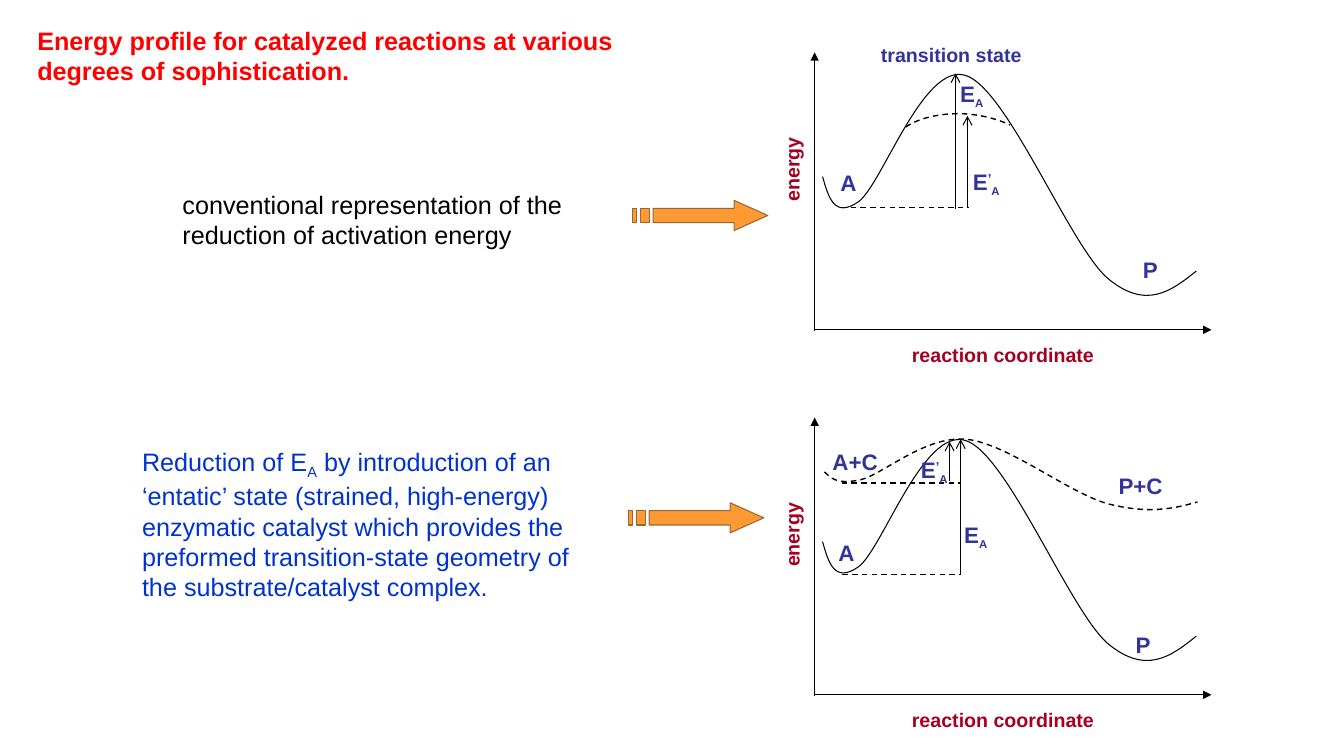
from lxml import etree
from pptx import Presentation
from pptx.dml.color import RGBColor
from pptx.enum.dml import MSO_LINE
from pptx.enum.shapes import MSO_CONNECTOR
from pptx.oxml.ns import qn
from pptx.util import Cm, Pt

STRAIGHT = MSO_CONNECTOR.STRAIGHT
DASH = MSO_LINE.DASH
COLORS = {
    "title": "FF0000", "body": "000000", "note": "0033CC",
    "axis": "A50021", "label": "333399", "line": "000000",
    "arrow": "FF9933", "arrow edge": "996633",
}
SHIFTS = {"_": "-25000", "^": "30000"}
DIAGRAM_TOPS = (0, 9.2)

presentation = Presentation()
presentation.slide_width, presentation.slide_height = Cm(33.87), Cm(19.05)
slide = presentation.slides.add_slide(presentation.slide_layouts[6])
shapes = slide.shapes


def write(text, left, top, width, height, color="label", size=16, bold=True,
          small=None, spacing=None, rotation=0):
    """Runs are split by |; a leading _ lowers a run, ^ raises it."""
    box = shapes.add_textbox(Cm(left), Cm(top), Cm(width), Cm(height))
    box.rotation = rotation
    frame = box.text_frame
    frame.word_wrap = True
    for index, line in enumerate(text.split("\n")):
        paragraph = frame.paragraphs[0] if index == 0 else frame.add_paragraph()
        if spacing:
            paragraph.line_spacing = spacing
        for piece in line.split("|"):
            run = paragraph.add_run()
            run.text = piece.lstrip("_^")
            run.font.name = "Arial"
            run.font.size = Pt(small if small and piece[0] == "_" else size)
            run.font.bold = bold
            run.font.color.rgb = RGBColor.from_string(COLORS[color])
            if piece[0] in SHIFTS:
                run._r.get_or_add_rPr().set("baseline", SHIFTS[piece[0]])


# Energy curves: a start, then two control points and an end for each cubic
reaction = [(20.73, 4.45), (20.88, 4.98), (21.03, 5.51), (21.64, 5.08),
            (22.23, 4.65), (23.27, 1.57), (24.33, 1.9),
            (25.37, 2.21), (26.95, 6.17), (27.91, 7.01),
            (28.88, 7.82), (29.51, 7.34), (30.15, 6.83)]
lowered_peak = [(22.83, 3.2), (23.16, 2.97), (23.72, 2.84), (24.33, 2.87),
                (24.74, 2.9), (25.15, 3), (25.45, 3.15)]
entatic = [(20.78, 11.89), (20.93, 12.04), (21.08, 12.22), (21.69, 12.09),
           (22.28, 11.94), (23.32, 10.97), (24.36, 11.07),
           (25.4, 11.18), (26.97, 12.45), (27.94, 12.7),
           (28.93, 12.95), (29.54, 12.83), (30.18, 12.65)]
curves = [([(x, y + top) for x, y in reaction], False) for top in DIAGRAM_TOPS]
curves += [(lowered_peak, True), (entatic, True)]
for points, dashed in curves:
    points = [(Cm(x), Cm(y)) for x, y in points]
    builder = shapes.build_freeform(*points[0])
    builder.add_line_segments(points[1:], close=False)
    curve = builder.convert_to_shape()
    outline = next(curve._element.iter(qn("a:path")))
    segments = outline.findall(qn("a:lnTo"))
    for first in range(0, len(segments), 3):
        cubic = etree.SubElement(outline, qn("a:cubicBezTo"))
        for segment in segments[first:first + 3]:
            cubic.append(segment[0])
            outline.remove(segment)
    curve.shadow.inherit = False
    curve.fill.background()
    curve.line.color.rgb = RGBColor.from_string(COLORS["line"])
    curve.line.width = Pt(1 if dashed else 0.75)
    if dashed:
        curve.line.dash_style = DASH

# Axes, energy levels (dashed, no head) and activation energies
lines = []
for top in DIAGRAM_TOPS:
    lines += [(20.53, 8.33 + top, 20.53, 1.32 + top, "triangle"),
              (20.54, 8.31 + top, 30.53, 8.31 + top, "triangle")]
lines += [
    (21.44, 5.23, 24.43, 5.23, None),
    (24.08, 5.26, 24.08, 1.85, "arrow"),
    (24.38, 5.23, 24.38, 2.92, "arrow"),
    (21.21, 12.17, 24.21, 12.17, None),
    (21.23, 14.48, 24.23, 14.48, None),
    (24.21, 14.48, 24.21, 11.07, "arrow"),
    (23.93, 12.12, 23.93, 11.13, "arrow"),
]
for x1, y1, x2, y2, head in lines:
    connector = shapes.add_connector(STRAIGHT, Cm(x1), Cm(y1), Cm(x2), Cm(y2))
    connector.line.color.rgb = RGBColor.from_string(COLORS["line"])
    connector.line.width = Pt(0.75 if head else 1)
    if head:
        etree.SubElement(connector.line._get_or_add_ln(), qn("a:tailEnd"), type=head)
    else:
        connector.line.dash_style = DASH
    etree.SubElement(connector._element.spPr, qn("a:effectLst"))

# Axis titles
for top in DIAGRAM_TOPS:
    write("energy", 18.85, 3.81 + top, 2.21, 0.84, color="axis", size=14, rotation=270)
    write("reaction coordinate", 22.73, 8.52 + top, 6.2, 0.84, color="axis", size=14)

# Curve labels
write("transition state", 21.95, 0.95, 5, 0.84, size=14)
for text, left, top, width in [
    ("A", 20.93, 4.14, 1), ("P", 28.55, 6.32, 1),
    ("A", 20.88, 13.46, 1), ("P", 28.37, 15.77, 1),
    ("A+C", 20.73, 11.18, 2), ("P+C", 27.94, 11.77, 2),
]:
    write(text, left, top, width, 0.94)
for text, left, top, width in [
    ("E|_A", 23.95, 1.92, 1.2), ("E|^’|_A", 24.27, 4.14, 1.6),
    ("E|_A", 24.05, 13.03, 1.2), ("E|^’|_A", 22.96, 11.4, 1.6),
]:
    write(text, left, top, width, 0.86, small=14, spacing=0.9)

# Title and descriptions
write("Energy profile for catalyzed reactions at various degrees of sophistication.",
      0.69, 0.52, 15.24, 1.8, color="title", size=18)
write("conventional representation of the reduction of activation energy",
      4.35, 4.65, 11.4, 1.78, color="body", size=18, bold=False)
write("Reduction of E|_A| by introduction of an ‘entatic’ state (strained, high-energy)\n"
      "enzymatic catalyst which provides the preformed transition-state geometry "
      "of the substrate/catalyst complex.",
      3.33, 11.12, 11.4, 4.06, color="note", size=18, bold=False)

# Striped arrows pointing to the diagrams
arrow_outlines = [
    [(2.57, 0), (2.57, 0.2), (0.53, 0.2), (0.53, 0.56),
     (2.57, 0.56), (2.57, 0.76), (3.42, 0.38)],
    [(0.22, 0.2), (0.22, 0.56), (0.43, 0.56), (0.43, 0.2)],
    [(0, 0.2), (0, 0.56), (0.11, 0.56), (0.11, 0.2)],
]
for left, top in [(15.93, 5.05), (15.83, 12.67)]:
    contours = [[(Cm(left + x), Cm(top + y)) for x, y in outline]
                for outline in arrow_outlines]
    builder = shapes.build_freeform(*contours[0][0])
    builder.add_line_segments(contours[0][1:])
    for contour in contours[1:]:
        builder.move_to(*contour[0])
        builder.add_line_segments(contour[1:])
    arrow = builder.convert_to_shape()
    arrow.shadow.inherit = False
    arrow.fill.solid()
    arrow.fill.fore_color.rgb = RGBColor.from_string(COLORS["arrow"])
    arrow.line.color.rgb = RGBColor.from_string(COLORS["arrow edge"])
    arrow.line.width = Pt(0.75)

presentation.save("out.pptx")
